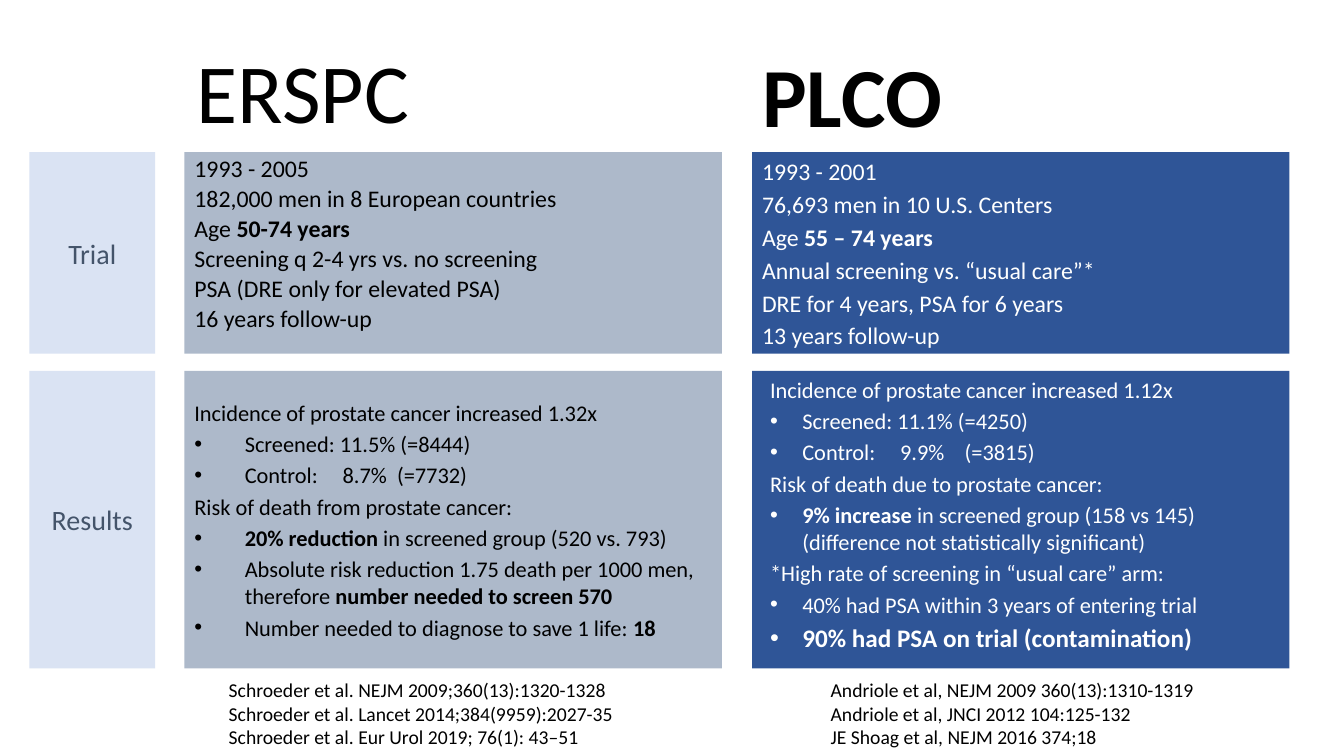
"""Build a slide comparing the ERSPC and PLCO prostate screening trials."""
from lxml import etree
from pptx import Presentation
from pptx.dml.color import RGBColor
from pptx.enum import shapes, text
from pptx.oxml import ns
from pptx.util import Inches, Pt

COLORS = {"black": "000000", "white": "FFFFFF", "label": "DAE3F3",
          "slate": "44546A", "ERSPC": "ADB9CA", "PLCO": "2F5597"}
ROWS = {"Trial": (1.51, 2), "Results": (3.68, 2.95)}
COLUMNS = {"ERSPC": 1.83, "PLCO": 7.46}
COLUMN_WIDTH = 5.33


def write(frame, content, size, color="black", before=0, spacing=1.0, align="LEFT",
          anchor="TOP", wrap=True, indent=0, hanging=0.5, tabs=()):
    """Write lines, where ** toggles bold, a leading • a bullet and | a line break."""
    frame.word_wrap = wrap
    frame.vertical_anchor = text.MSO_ANCHOR[anchor]
    for index, line in enumerate(content.split("\n")):
        paragraph = frame.paragraphs[0] if index == 0 else frame.add_paragraph()
        properties = paragraph._p.get_or_add_pPr()
        bulleted = line.startswith("•")
        left = indent + hanging if bulleted else indent
        properties.set("marL", str(Inches(left)))
        properties.set("indent", str(Inches(-hanging if bulleted else 0)))
        if bulleted:
            etree.SubElement(properties, ns.qn("a:buFont"), typeface="Arial")
            etree.SubElement(properties, ns.qn("a:buChar"), char="•")
        if "\t" in line:
            stops = etree.SubElement(properties, ns.qn("a:tabLst"))
            for stop in tabs:
                etree.SubElement(stops, ns.qn("a:tab"), pos=str(Inches(stop)), algn="l")
        paragraph.alignment = text.PP_ALIGN[align]
        paragraph.line_spacing = spacing
        paragraph.space_before = Pt(before if index else 0)
        for part, piece in enumerate(line.lstrip("•").split("**")):
            for row, words in enumerate(piece.split("|")):
                if row:
                    paragraph.add_line_break()
                if words:
                    run = paragraph.add_run()
                    run.text = words
                    run.font.name = "Calibri"
                    run.font.size = Pt(size)
                    run.font.bold = part % 2 == 1
                    run.font.color.rgb = RGBColor.from_string(COLORS[color])
    return paragraph


def add_panel(left, top, width, height, fill):
    panel = slide.shapes.add_shape(shapes.MSO_SHAPE.RECTANGLE, Inches(left), Inches(top),
                                   Inches(width), Inches(height))
    panel.shadow.inherit = False
    panel.fill.solid()
    panel.fill.fore_color.rgb = RGBColor.from_string(COLORS[fill])
    panel.line.fill.background()
    return panel.text_frame


deck = Presentation()
deck.slide_width, deck.slide_height = Inches(13.33), Inches(7.5)
slide = deck.slides.add_slide(deck.slide_layouts[5])

title = slide.shapes.title
title.left, title.top = Inches(1.85), Inches(0.36)
title.width, title.height = Inches(COLUMN_WIDTH), Inches(1.2)
title.text_frame.auto_size = text.MSO_AUTO_SIZE.NONE
write(title.text_frame, "ERSPC", 60, spacing=0.9, anchor="MIDDLE")

plco_heading = slide.shapes.add_textbox(Inches(COLUMNS["PLCO"]), Inches(0.33),
                                        Inches(COLUMN_WIDTH), Inches(1.2))
write(plco_heading.text_frame, "**PLCO**", 60, anchor="MIDDLE")

for label, (top, height) in ROWS.items():
    write(add_panel(0.29, top, 1.25, height, "label"), label, 20, "slate",
          align="CENTER", anchor="MIDDLE")

erspc_trial = """1993 - 2005
182,000 men in 8 European countries
Age **50-74 years**
Screening q 2-4 yrs vs. no screening
PSA (DRE only for elevated PSA)
16 years follow-up"""
plco_trial = """1993 - 2001
76,693 men in 10 U.S. Centers
Age **55 – 74 years**
Annual screening vs. “usual care”*
DRE for 4 years, PSA for 6 years
13 years follow-up"""
erspc_results = """Incidence of prostate cancer increased 1.32x
•Screened: 11.5% (=8444)
•Control:\t8.7%\t(=7732)
Risk of death from prostate cancer:
•**20% reduction** in screened group (520 vs. 793)
•Absolute risk reduction 1.75 death per 1000 men, therefore **number needed to screen 570**
•Number needed to diagnose to save 1 life: **18**"""
plco_results = """Incidence of prostate cancer increased 1.12x
•Screened: 11.1% (=4250)
•Control:\t9.9%\t(=3815)
Risk of death due to prostate cancer:
•**9% increase** in screened group (158 vs 145)|(difference not statistically significant)
*High rate of screening in “usual care” arm:
•40% had PSA within 3 years of entering trial
•**90% had PSA on trial (contamination)**"""

panels = {(trial, row): add_panel(left, top, COLUMN_WIDTH, height, trial)
          for trial, left in COLUMNS.items() for row, (top, height) in ROWS.items()}
write(panels["ERSPC", "Trial"], erspc_trial, 17, before=3, spacing=0.9)
write(panels["PLCO", "Trial"], plco_trial, 17, "white", before=3)
write(panels["ERSPC", "Results"], erspc_results, 16, before=3.2, anchor="MIDDLE",
      tabs=(1.47, 2.01))
contamination = write(panels["PLCO", "Results"], plco_results, 16, "white", before=3.2,
                      indent=0.08, hanging=0.32, tabs=(1.37, 2.01))
contamination.runs[0].font.size = Pt(18)

references = [
    (2.17, 4.05, """Schroeder et al. NEJM 2009;360(13):1320-1328
Schroeder et al. Lancet 2014;384(9959):2027-35
Schroeder et al. Eur Urol 2019; 76(1): 43–51"""),
    (8.14, 3.84, """Andriole et al, NEJM 2009 360(13):1310-1319
Andriole et al, JNCI 2012 104:125-132
JE Shoag et al, NEJM 2016 374;18"""),
]
for left, width, citations in references:
    reference = slide.shapes.add_textbox(Inches(left), Inches(6.68), Inches(width), Inches(0.81))
    write(reference.text_frame, citations, 14, wrap=False)

deck.save("out.pptx")
